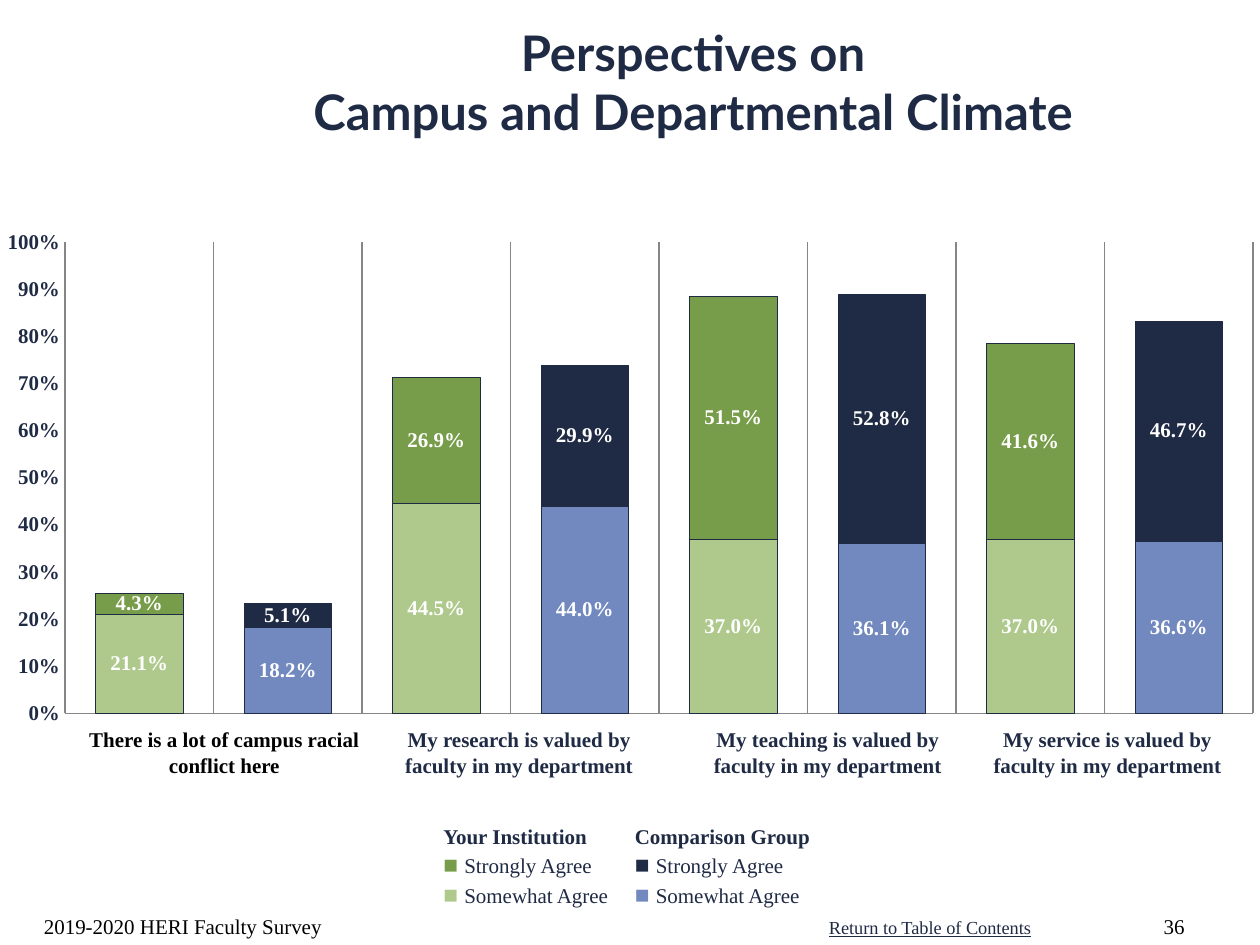
from dataclasses import dataclass

from lxml import etree
from pptx import Presentation
from pptx import util as u
from pptx.chart.data import CategoryChartData
from pptx.dml.color import RGBColor
from pptx.enum import chart as ch
from pptx.enum import text
from pptx.oxml.ns import qn

W, H = 10, 7.5


@dataclass(frozen=True)
class Theme:
    navy: str = "1F2A44"
    blue: str = "7289BF"
    green: str = "789D4A"
    light_green: str = "AFC98D"
    white: str = "FFFFFF"
    black: str = "000000"
    grid: str = "868686"
    head_font: str = "Lato"
    body_font: str = "Times New Roman"
    title: float = 28
    marker: float = 14
    body: float = 12
    link: float = 10.5


T = Theme()
LEFT, CENTER, RIGHT = (text.PP_ALIGN.LEFT, text.PP_ALIGN.CENTER, text.PP_ALIGN.RIGHT)
TOP, BOTTOM = text.MSO_ANCHOR.TOP, text.MSO_ANCHOR.BOTTOM

SOMEWHAT = [0.211, 0.182, 0.445, 0.44, 0.37, 0.361, 0.37, 0.366]
STRONGLY = [0.043, 0.051, 0.269, 0.299, 0.515, 0.528, 0.416, 0.467]

# Left edge, width and lines of each question under the chart
QUESTIONS = [
    (0.57, 2.42, ["There is a lot of campus racial", "conflict here"]),
    (3.08, 2.08, ["My research is valued by", "faculty in my department"]),
    (5.53, 2.08, ["My teaching is valued by", "faculty in my department"]),
    (7.75, 2.08, ["My service is valued by", "faculty in my department"]),
]


def rgb(color):
    return RGBColor.from_string(color)


def style_font(font, size=T.body, color=T.navy, bold=False, name=T.body_font):
    font.size, font.bold, font.name = u.Pt(size), bold, name
    font.color.rgb = rgb(color)


def add_text(s, lines, box, align=LEFT, anchor=TOP, wrap=True, top_inset=0.05,
             underline=False, **font):
    """Each line is a string, or a list of (text, font options) runs."""
    sp = s.shapes.add_textbox(*(u.Inches(v) for v in box))
    tf = sp.text_frame
    tf.word_wrap, tf.vertical_anchor = wrap, anchor
    tf.margin_top = u.Inches(top_inset)
    for i, line in enumerate(lines):
        p = tf.paragraphs[0] if i == 0 else tf.add_paragraph()
        p.alignment = align
        runs = [(line, {})] if isinstance(line, str) else line
        for content, options in runs:
            r = p.add_run()
            r.text = content
            style_font(r.font, **{**font, **options})
            if underline:
                r.font.underline = True
    return sp


def paint(fmt, color):
    fmt.fill.solid()
    fmt.fill.fore_color.rgb = rgb(color)
    fmt.line.color.rgb = rgb(T.navy)
    fmt.line.width = u.Pt(0.25)


def set_plot_layout(chart, x, y, w, h):
    area = chart._chartSpace.chart.plotArea
    for old in area.findall(qn("c:layout")):
        area.remove(old)
    layout = etree.Element(qn("c:layout"))
    manual = etree.SubElement(layout, qn("c:manualLayout"))
    for tag, val in [("layoutTarget", "inner"), ("xMode", "edge"), ("yMode", "edge"),
                     ("x", x), ("y", y), ("w", w), ("h", h)]:
        etree.SubElement(manual, qn("c:" + tag)).set("val", str(val))
    area.insert(0, layout)


def add_climate_chart(s, box):
    data = CategoryChartData(number_format="0.0%")
    data.categories = [str(n + 1) for n in range(len(SOMEWHAT))]
    data.add_series("Somewhat Agree", SOMEWHAT)
    data.add_series("Strongly Agree", STRONGLY)
    chart = s.shapes.add_chart(ch.XL_CHART_TYPE.COLUMN_STACKED,
                               *(u.Inches(v) for v in box), data).chart
    chart.has_legend = chart.has_title = False
    style_font(chart.font, bold=True)
    set_plot_layout(chart, 0.045, 0.043, 0.955, 0.936)

    # Axes
    cat, val = chart.category_axis, chart.value_axis
    cat.tick_label_position = ch.XL_TICK_LABEL_POSITION.NONE
    cat.has_major_gridlines, val.has_major_gridlines = True, False
    val.minimum_scale, val.maximum_scale, val.major_unit = 0, 1, 0.1
    val.tick_labels.number_format = "0%"
    val.tick_labels.number_format_is_linked = False
    for axis in (cat, val):
        axis.major_tick_mark = axis.minor_tick_mark = ch.XL_TICK_MARK.NONE
    for fmt in (cat.format, val.format, cat.major_gridlines.format):
        fmt.line.color.rgb = rgb(T.grid)
        fmt.line.width = u.Pt(0.75)

    # Columns: institution and comparison group alternate
    plot = chart.plots[0]
    plot.gap_width, plot.overlap, plot.vary_by_categories = 70, 100, False
    colors = [(T.light_green, T.blue), (T.green, T.navy)]
    for series, (institution, comparison) in zip(plot.series, colors):
        paint(series.format, institution)
        for i in range(1, len(SOMEWHAT), 2):
            paint(series.points[i].format, comparison)
        labels = series.data_labels
        labels.show_value = True
        labels.number_format, labels.number_format_is_linked = "0.0%", False
        labels.position = ch.XL_LABEL_POSITION.CENTER
        style_font(labels.font, color=T.white, bold=True)


def add_legend(s, left, heading, strong, somewhat):
    def entry(color, label):
        return [("■ ", {"size": T.marker, "color": color}), (label, {})]

    add_text(s, [[(heading, {"bold": True})], entry(strong, "Strongly Agree"),
                 entry(somewhat, "Somewhat Agree")], (left, 6.49, 1.6, 0.98))


def main():
    prs = Presentation()
    prs.slide_width, prs.slide_height = u.Inches(W), u.Inches(H)
    s = prs.slides.add_slide(prs.slide_layouts[6])

    # Title
    add_text(s, ["Perspectives on", "Campus and Departmental Climate"],
             (1, 0.17, W - 1, 1.42), align=CENTER, top_inset=0.01,
             size=T.title, bold=True, name=T.head_font)

    # Chart and question labels
    add_climate_chart(s, (0.06, 1.75, 9.89, 4))
    for i, (left, width, lines) in enumerate(QUESTIONS):
        add_text(s, lines, (left, 5.72, width, 0.5), align=CENTER, wrap=False,
                 bold=True, color=T.navy if i else T.black)

    # Legend
    add_legend(s, 3.42, "Your Institution", T.green, T.light_green)
    add_legend(s, 4.94, "Comparison Group", T.navy, T.blue)

    # Footer
    add_text(s, ["2019-2020 HERI Faculty Survey"], (0.25, 7, 3.17, 0.5),
             anchor=BOTTOM, color=T.black)
    add_text(s, ["Return to Table of Contents"], (6.48, 7.22, 1.82, 0.28),
             wrap=False, underline=True, size=T.link)
    add_text(s, ["36"], (9, 7, 0.5, 0.5), align=RIGHT, anchor=BOTTOM, color=T.black)

    prs.save("out.pptx")


if __name__ == "__main__":
    main()
